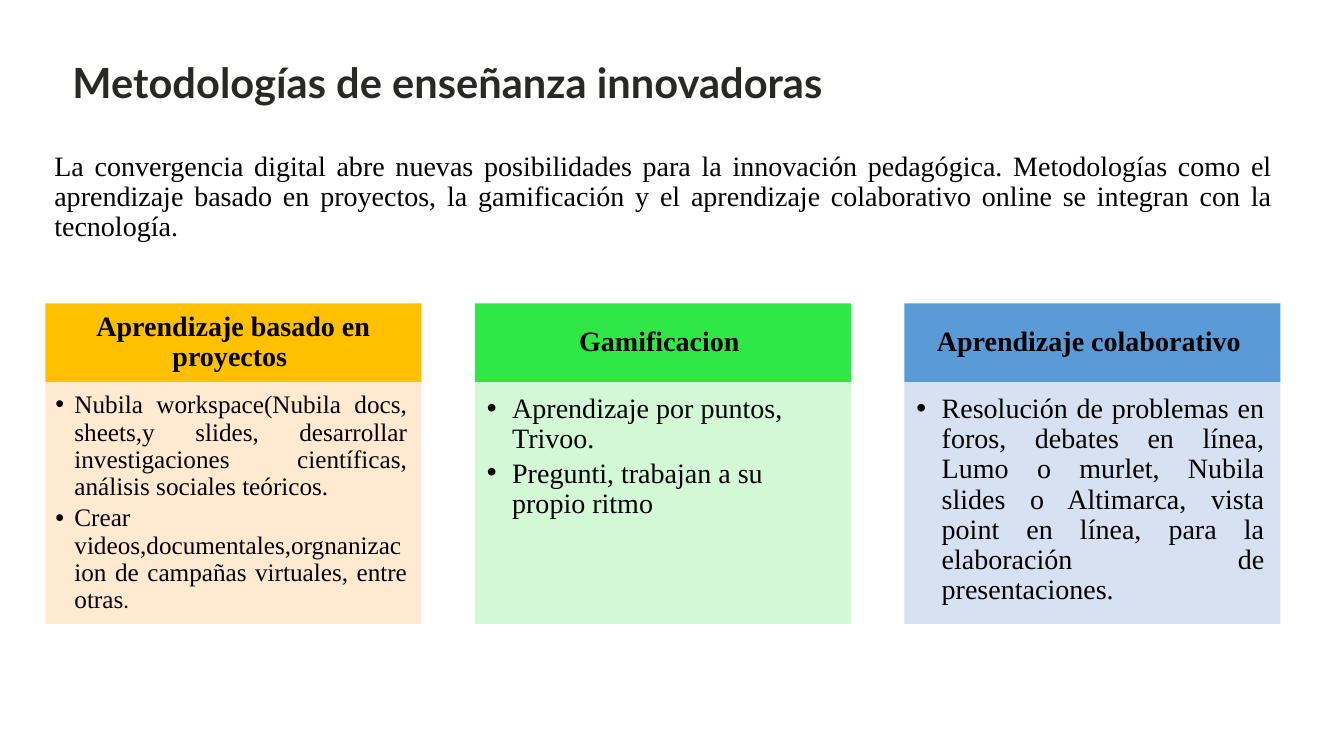
import pptx
import pptx.util
import pptx.dml.color
import pptx.enum.shapes
import pptx.enum.text
import pptx.oxml
import pptx.oxml.ns
import dataclasses

Inches = pptx.util.Inches
Align = pptx.enum.text.PP_ALIGN
Anchor = pptx.enum.text.MSO_ANCHOR


@dataclasses.dataclass
class Theme:
    # Fonts
    head: str = "Lato"
    body: str = "Times New Roman"
    stop: str = "Calibri"
    # Type sizes
    title: float = 29.7
    text: float = 20
    small: float = 18
    dot: float = 16
    # Colours
    dark: str = "282824"
    black: str = "000000"
    gold: tuple = ("FFC000", "FFE8CC")
    green: tuple = ("30E845", "CFF8D1")
    blue: tuple = ("5B9BD5", "D2DFF0")


def hue(code):
    return pptx.dml.color.RGBColor.from_string(code)


def apply(item, values):
    for name, value in values.items():
        setattr(item, name, value)


class Deck:
    def __init__(self, theme):
        self.theme = theme
        self.file = pptx.Presentation()
        apply(self.file, {"slide_width": Inches(13.33), "slide_height": Inches(7.5)})
        self.slide = self.file.slides.add_slide(self.file.slide_layouts[6])

    def style(self, run, size, font=None, color=None, bold=False):
        apply(run.font, {"name": font or self.theme.body, "size": pptx.util.Pt(size), "bold": bold})
        run.font.color.rgb = hue(color or self.theme.black)

    def frame(self, shape, anchor, pads=(0.1, 0.05, 0.1, 0.05)):
        frame = shape.text_frame
        sides = ("margin_left", "margin_top", "margin_right", "margin_bottom")
        apply(frame, {"word_wrap": True, "vertical_anchor": anchor})
        apply(frame, {side: Inches(pad) for side, pad in zip(sides, pads)})
        return frame

    def phrase(self, par, text, size, align, space=0.9, **look):
        apply(par, {"alignment": align, "line_spacing": space})
        run = par.add_run()
        run.text = text
        self.style(run, size, **look)

    def label(self, place, text, size, align, anchor, **look):
        box = self.slide.shapes.add_textbox(*map(Inches, place))
        self.phrase(self.frame(box, anchor).paragraphs[0], text, size, align, **look)

    def panel(self, place, color, alpha=None):
        kind = pptx.enum.shapes.MSO_SHAPE.RECTANGLE
        shape = self.slide.shapes.add_shape(kind, *map(Inches, place))
        shape.shadow.inherit = False
        shape.fill.solid()
        shape.fill.fore_color.rgb = hue(color)
        shape.line.fill.background()
        if alpha:
            tint = shape.element.spPr.find(".//" + pptx.oxml.ns.qn("a:srgbClr"))
            tint.append(pptx.oxml.parse_xml(
                f'<a:alpha {pptx.oxml.ns.nsdecls("a")} val="{alpha * 1000}"/>'))
        return shape

    def bullet(self, par, indent):
        props = par._p.get_or_add_pPr()
        props.set("marL", str(Inches(indent)))
        props.set("indent", str(-Inches(indent)))
        marks = ('buFont {} typeface="Arial"', 'buChar {} char="•"')
        for mark in marks:
            props.append(pptx.oxml.parse_xml(
                f'<a:{mark.format(pptx.oxml.ns.nsdecls("a"))}/>'))

    def card(self, left, colors, title, items, size, align, indent, pads, stop=""):
        # Heading
        head = self.panel((left, 3.01, 3.73, 0.78), colors[0])
        frame = self.frame(head, Anchor.MIDDLE, (0.16, 0.09, 0.16, 0.09))
        self.phrase(frame.paragraphs[0], title, self.theme.text, Align.CENTER, bold=True)
        # Bulleted list
        base = self.panel((left, 3.79, 3.73, 2.4), colors[1], 90)
        frame = self.frame(base, Anchor.TOP, pads)
        for rank, item in enumerate(items):
            par = frame.add_paragraph() if rank else frame.paragraphs[0]
            self.bullet(par, indent)
            par.space_after = pptx.util.Pt(round(size * 0.15))
            self.phrase(par, item, size, align)
        if stop:
            self.phrase(par, stop, self.theme.dot, align, font=self.theme.stop)


def main():
    theme = Theme()
    deck = Deck(theme)

    # Title and opening text
    deck.label((0.62, 0.58, 12.1, 0.53), "Metodologías de enseñanza innovadoras",
               theme.title, Align.LEFT, Anchor.BOTTOM, space=pptx.util.Pt(41.5),
               font=theme.head, color=theme.dark, bold=True)
    deck.label((0.44, 1.46, 12.28, 1.07),
               "La convergencia digital abre nuevas posibilidades para la innovación "
               "pedagógica. Metodologías como el aprendizaje basado en proyectos, la "
               "gamificación y el aprendizaje colaborativo online se integran con la "
               "tecnología.", theme.text, Align.JUSTIFY, Anchor.TOP)

    # Three method cards
    tight = (0.1, 0.1, 0.14, 0.16)
    wide = (0.12, 0.12, 0.16, 0.17)
    cards = [
        (theme.gold, "Aprendizaje basado en proyectos ",
         ["Nubila workspace(Nubila docs, sheets,y slides, desarrollar "
          "investigaciones científicas, análisis sociales teóricos.",
          "Crear videos,documentales,orgnanizacion de campañas virtuales, entre otras"],
         theme.small, Align.JUSTIFY, 0.19, tight, "."),
        (theme.green, "Gamificacion ",
         ["Aprendizaje por puntos, Trivoo.", "Pregunti, trabajan a su propio ritmo"],
         theme.text, Align.LEFT, 0.25, wide),
        (theme.blue, "Aprendizaje colaborativo ",
         ["Resolución de problemas en foros, debates en línea, Lumo o murlet, "
          "Nubila slides o Altimarca, vista point en línea, para la elaboración "
          "de presentaciones."],
         theme.text, Align.JUSTIFY, 0.25, wide),
    ]
    for rank, card in enumerate(cards):
        deck.card(0.45 + 4.26 * rank, *card)

    deck.file.save("out.pptx")


if __name__ == "__main__":
    main()
